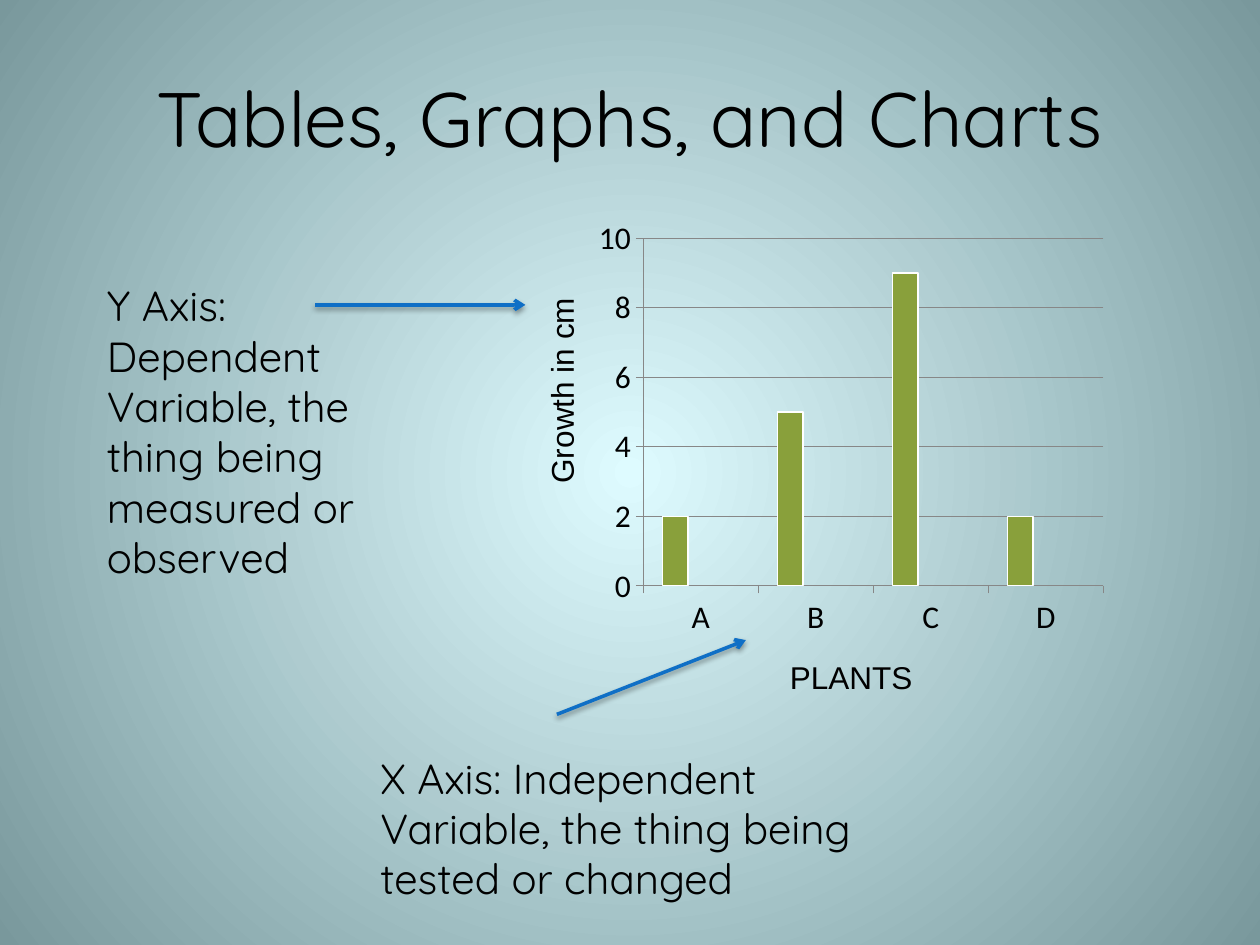
from lxml.etree import SubElement
from pptx import Presentation
from pptx.chart.data import CategoryChartData
from pptx.dml.color import RGBColor
from pptx.enum.chart import XL_CHART_TYPE as ChartType, XL_TICK_MARK as TickMark
from pptx.enum.shapes import MSO_CONNECTOR as Connector
from pptx.enum.text import MSO_ANCHOR as Anchor, PP_ALIGN as Align
from pptx.oxml import parse_xml
from pptx.oxml.ns import nsdecls, qn
from pptx.util import Inches, Pt

BLACK = RGBColor(0x00, 0x00, 0x00)
WHITE = RGBColor(0xFF, 0xFF, 0xFF)
BLUE = RGBColor(0x0F, 0x6F, 0xC6)
CYAN = RGBColor(0x00, 0x9D, 0xD9)
TURQUOISE = RGBColor(0x0B, 0xD0, 0xD9)
GREEN = RGBColor(0x89, 0xA0, 0x3B)
GRAY = RGBColor(0x87, 0x87, 0x87)
CENTER_TINT = RGBColor(0xDE, 0xFB, 0xFF)
EDGE_TINT = RGBColor(0x79, 0x98, 0x9C)

SHADOW_XML = (
    f'<a:effectLst {nsdecls("a")}>'
    '<a:outerShdw blurRad="39370" dist="20320" dir="5400000" rotWithShape="0">'
    '<a:srgbClr val="000000"><a:alpha val="38000"/></a:srgbClr>'
    '</a:outerShdw></a:effectLst>'
)


def set_background(slide):
    """Radial gradient, light in the middle."""
    fill = slide.background.fill
    fill.gradient()
    for stop, color in zip(fill.gradient_stops, (CENTER_TINT, EDGE_TINT)):
        stop.color.rgb = color
    gradient = slide.element.find(".//" + qn("a:gradFill"))
    gradient.remove(gradient.find(qn("a:lin")))
    circle = SubElement(gradient, qn("a:path"), {"path": "circle"})
    SubElement(circle, qn("a:fillToRect"), {side: "50000" for side in "ltrb"})


def add_run(paragraph, text, size, font_name):
    run = paragraph.add_run()
    run.text = text
    run.font.size = Pt(size)
    run.font.name = font_name
    run.font.color.rgb = BLACK


def set_title(slide, text):
    title = slide.shapes.title
    title.left, title.top = Inches(0.5), Inches(0.3)
    title.width, title.height = Inches(9), Inches(1.25)
    title.text_frame.vertical_anchor = Anchor.MIDDLE
    paragraph = title.text_frame.paragraphs[0]
    paragraph.alignment = Align.CENTER
    add_run(paragraph, text, 44, "Quicksand")


def add_text(slide, box, lines, size=24, font_name="Quicksand", wrap=True, rotation=0):
    shape = slide.shapes.add_textbox(*map(Inches, box))
    shape.rotation = rotation
    frame = shape.text_frame
    frame.word_wrap = wrap
    for index, line in enumerate(lines):
        paragraph = frame.add_paragraph() if index else frame.paragraphs[0]
        add_run(paragraph, line, size, font_name)


def add_axis_title(slide, box, text, rotation=0):
    add_text(slide, box, [text], 18, "Arial", wrap=False, rotation=rotation)


def add_arrow(slide, start, end):
    arrow = slide.shapes.add_connector(
        Connector.STRAIGHT, *map(Inches, start + end))
    arrow.line.color.rgb = BLUE
    arrow.line.width = Pt(2)
    properties = arrow.element.spPr
    SubElement(properties.find(qn("a:ln")), qn("a:tailEnd"), {"type": "arrow"})
    properties.append(parse_xml(SHADOW_XML))


def add_growth_chart(slide, box):
    data = CategoryChartData()
    data.categories = list("ABCD")
    data.add_series("Series 1", (2, 5, 9, 2))
    for name in ("Series 2", "Series 3"):
        data.add_series(name, (None,) * 4)
    chart = slide.shapes.add_chart(
        ChartType.COLUMN_CLUSTERED, *map(Inches, box), data).chart
    chart.has_legend = chart.has_title = False
    chart.font.size = Pt(18)
    chart.font.name = "Calibri"
    chart.font.color.rgb = BLACK

    # Columns
    plot = chart.plots[0]
    plot.gap_width = 150
    plot.overlap = 0
    plot.vary_by_categories = False
    for series, color in zip(plot.series, (GREEN, CYAN, TURQUOISE)):
        series.format.fill.solid()
        series.format.fill.fore_color.rgb = color
        series.format.line.color.rgb = WHITE
        series.format.line.width = Pt(0.75)

    # Axes and gridlines
    value_axis = chart.value_axis
    value_axis.minimum_scale, value_axis.maximum_scale = 0, 10
    value_axis.major_unit = 2
    value_axis.has_major_gridlines = True
    for axis in (chart.category_axis, value_axis):
        axis.major_tick_mark = TickMark.OUTSIDE
        axis.format.line.color.rgb = GRAY
    value_axis.major_gridlines.format.line.color.rgb = GRAY


def main():
    presentation = Presentation()
    presentation.slide_width = Inches(10)
    presentation.slide_height = Inches(7.5)
    slide = presentation.slides.add_slide(presentation.slide_layouts[5])
    set_background(slide)
    set_title(slide, "Tables, Graphs, and Charts")

    # Explanations of the axes
    add_text(slide, (2.92, 5.92, 4.42, 1.31),
             ["X Axis: Independent Variable, the thing being tested or changed"])
    add_text(slide, (0.75, 2.17, 2.42, 2.52),
             ["Y Axis: Dependent Variable, the", "thing being measured or observed"])

    # Chart with its axis titles
    add_growth_chart(slide, (4.67, 1.67, 4.17, 3.45))
    add_axis_title(slide, (6.17, 5.17, 1.18, 0.4), "PLANTS")
    add_axis_title(slide, (3.61, 2.89, 1.69, 0.4), "Growth in cm", rotation=270)

    # Arrows from the explanations to the axes
    add_arrow(slide, (4.42, 5.67), (5.92, 5.08))
    add_arrow(slide, (2.5, 2.42), (4.17, 2.42))

    presentation.save("out.pptx")


if __name__ == "__main__":
    main()
